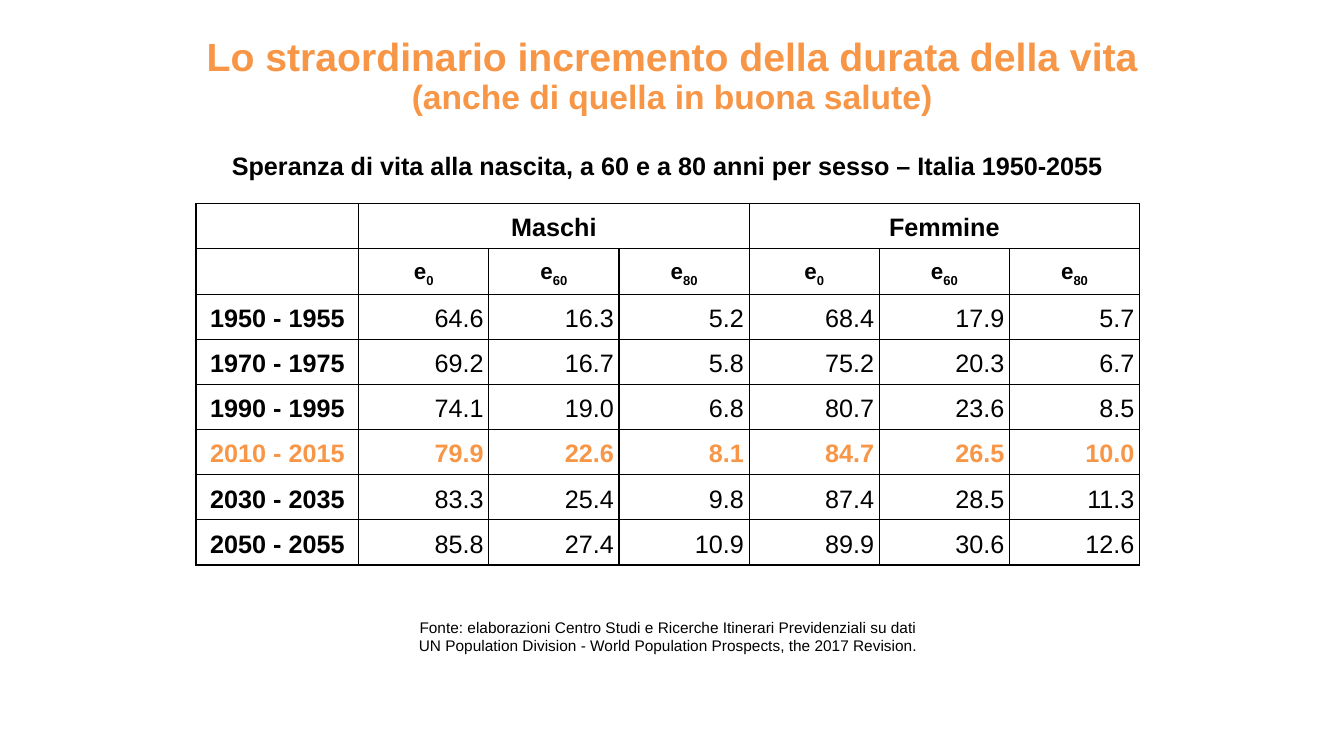
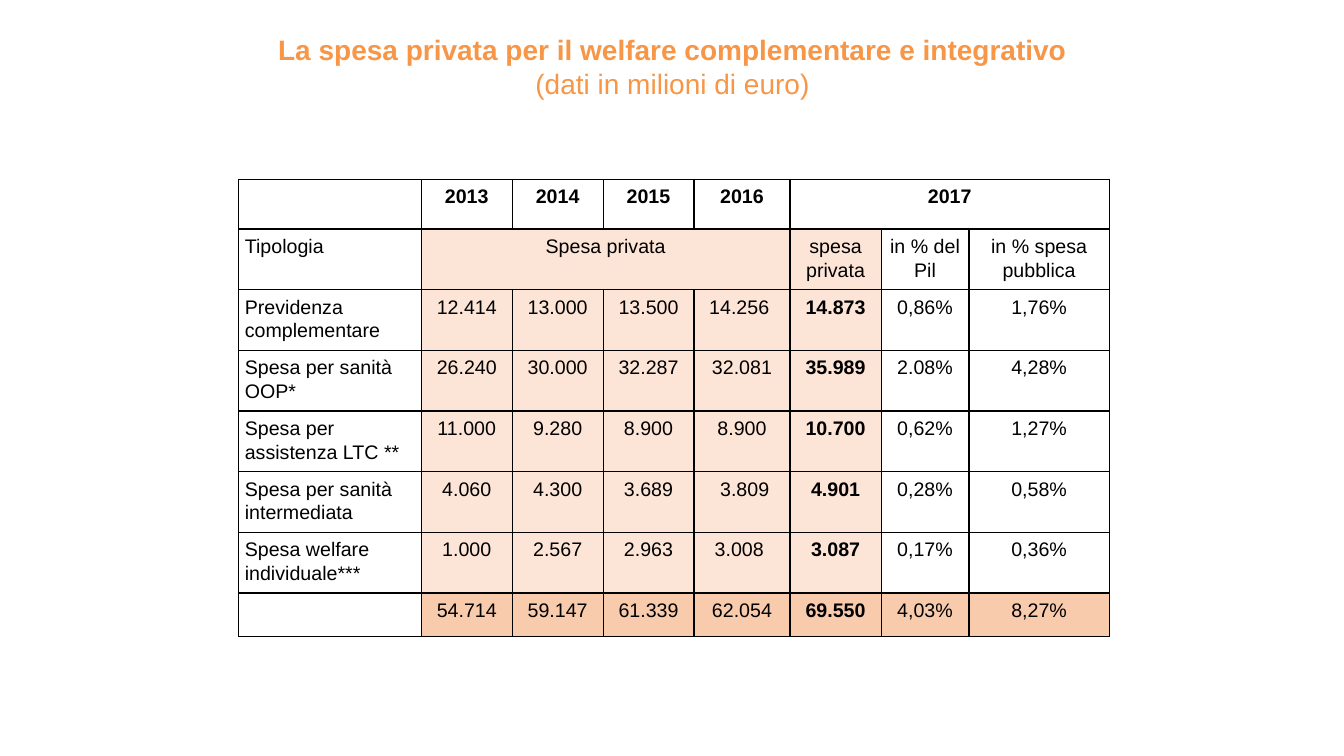
from lxml.etree import SubElement
from pptx import Presentation
from pptx.dml.color import RGBColor
from pptx.enum.text import MSO_ANCHOR, PP_ALIGN
from pptx.oxml.ns import qn
from pptx.util import Cm, Pt

ORANGE = "F79646"
BLACK = "000000"
PALE = "FCE4D6"
PEACH = "F8CBAD"


def color(value):
    return RGBColor.from_string(value)


class Report:
    font_name = "Arial"
    border_width = Pt(0.96)

    def __init__(self):
        self.deck = Presentation()
        self.deck.slide_width = Cm(33.87)
        self.deck.slide_height = Cm(19.05)
        self.page = None

    def new_page(self):
        self.page = self.deck.slides.add_slide(self.deck.slide_layouts[6])

    def style(self, paragraph, size, ink=BLACK, bold=False, align=PP_ALIGN.CENTER, spacing=1.0):
        paragraph.alignment = align
        paragraph.line_spacing = spacing
        paragraph.font.name = self.font_name
        paragraph.font.size = Pt(size)
        paragraph.font.bold = bold
        paragraph.font.color.rgb = color(ink)

    def text(self, content, left, top, width, height, size, anchor=MSO_ANCHOR.MIDDLE, **look):
        box = self.page.shapes.add_textbox(Cm(left), Cm(top), Cm(width), Cm(height))
        box.text_frame.word_wrap = True
        box.text_frame.vertical_anchor = anchor
        paragraph = box.text_frame.paragraphs[0]
        paragraph.add_run().text = content
        self.style(paragraph, size, **look)
        return paragraph

    def title(self, heading, subheading, left, top, width, height, size,
              subheading_size, subheading_bold, spacing):
        paragraph = self.text(heading, left, top, width, height, size,
                              ink=ORANGE, bold=True, spacing=spacing)
        paragraph.add_line_break()
        span = paragraph.add_run()
        span.text = subheading
        span.font.size = Pt(subheading_size)
        span.font.bold = subheading_bold

    def borders(self, cell):
        properties = cell._tc.get_or_add_tcPr()
        for side in ("lnL", "lnR", "lnT", "lnB"):
            line = SubElement(properties, qn(f"a:{side}"), w=str(self.border_width))
            fill = SubElement(line, qn("a:solidFill"))
            SubElement(fill, qn("a:srgbClr"), val=BLACK)

    def cell(self, cell, content, margin, anchor, look, fill=None):
        self.borders(cell)
        if fill:
            cell.fill.solid()
            cell.fill.fore_color.rgb = color(fill)
        else:
            cell.fill.background()
        cell.margin_left = cell.margin_right = Cm(margin)
        cell.margin_top = cell.margin_bottom = Cm(0.13)
        cell.vertical_anchor = anchor
        if not content:
            return
        paragraph = cell.text_frame.paragraphs[0]
        base, _, subscript = content.partition("_")
        paragraph.add_run().text = base
        if subscript:
            span = paragraph.add_run()
            span.text = subscript
            span._r.get_or_add_rPr().set("baseline", "-25000")
        self.style(paragraph, **look)

    def table(self, rows, left, top, widths, heights, margin, anchor, look_at, fill_at):
        table = self.page.shapes.add_table(
            len(rows), len(widths), Cm(left), Cm(top), Cm(sum(widths)), Cm(sum(heights))
        ).table
        table.first_row = table.horz_banding = False
        for column, width in zip(table.columns, widths):
            column.width = Cm(width)
        for row, height in zip(table.rows, heights):
            row.height = Cm(height)
        for r, row in enumerate(rows):
            start = 0
            for c, content in enumerate(row):
                self.cell(table.cell(r, c), content, margin, anchor, look_at(r, c), fill_at(r, c))
                if content is not None:
                    start = c
                elif c + 1 == len(row) or row[c + 1] is not None:
                    table.cell(r, start).merge(table.cell(r, c))


LIFE_ROWS = [
    ["", "Maschi", None, None, "Femmine", None, None],
    [""] + ["e_0", "e_60", "e_80"] * 2,
    ["1950 - 1955", "64.6", "16.3", "5.2", "68.4", "17.9", "5.7"],
    ["1970 - 1975", "69.2", "16.7", "5.8", "75.2", "20.3", "6.7"],
    ["1990 - 1995", "74.1", "19.0", "6.8", "80.7", "23.6", "8.5"],
    ["2010 - 2015", "79.9", "22.6", "8.1", "84.7", "26.5", "10.0"],
    ["2030 - 2035", "83.3", "25.4", "9.8", "87.4", "28.5", "11.3"],
    ["2050 - 2055", "85.8", "27.4", "10.9", "89.9", "30.6", "12.6"],
]

SPENDING_ROWS = [
    ["", "2013", "2014", "2015", "2016", "2017", None, None],
    ["Tipologia", "Spesa privata", None, None, None, "spesa privata", "in % del Pil",
     "in % spesa pubblica"],
    ["Previdenza complementare", "12.414", "13.000", "13.500", "14.256 ", "14.873",
     "0,86%", "1,76%"],
    ["Spesa per sanità OOP*", "26.240", "30.000", "32.287", "32.081", "35.989",
     "2.08%", "4,28%"],
    ["Spesa per assistenza LTC **", "11.000", "9.280", "8.900", "8.900", "10.700",
     "0,62%", "1,27%"],
    ["Spesa per sanità intermediata", "4.060", "4.300", "3.689", " 3.809", "4.901",
     "0,28%", "0,58%"],
    ["Spesa welfare individuale***", "1.000", "2.567", "2.963", "3.008 ", "3.087",
     "0,17%", "0,36%"],
    ["", "54.714", "59.147", "61.339", "62.054", "69.550", "4,03%", "8,27%"],
]


def life_look(row, column):
    highlighted = row == 5
    is_header = row < 2 or column == 0
    return {
        "size": 16 if row == 1 else 18,
        "ink": ORANGE if highlighted else BLACK,
        "bold": is_header or highlighted,
        "align": PP_ALIGN.CENTER if is_header else PP_ALIGN.RIGHT,
        "spacing": 1.15,
    }


def spending_look(row, column):
    return {
        "size": 14,
        "bold": row == 0 or (row > 1 and column == 5),
        "align": PP_ALIGN.LEFT if column == 0 else PP_ALIGN.CENTER,
        "spacing": 1.07,
    }


def spending_fill(row, column):
    if row == 0 or column == 0:
        return None
    if row == len(SPENDING_ROWS) - 1:
        return PEACH
    return PALE if column <= 5 else None


def life_page(report):
    report.new_page()
    report.title("Lo straordinario incremento della durata della vita",
                 "(anche di quella in buona salute)",
                 4.24, 0.76, 25.4, 2.36, 28, 24, True, 0.9)
    report.text("Speranza di vita alla nascita, a 60 e a 80 anni per sesso – Italia 1950-2055",
                4.92, 3.66, 23.8, 1.02, 18, bold=True)
    report.table(LIFE_ROWS, 4.94, 5.13, [4.1] + [3.28] * 6, [1.12] * 7 + [1.14],
                 0.13, MSO_ANCHOR.MIDDLE, life_look, lambda row, column: None)
    report.text("Fonte: elaborazioni Centro Studi e Ricerche Itinerari Previdenziali su dati "
                "UN Population Division - World Population Prospects, the 2017 Revision.",
                10.16, 15.44, 13.36, 1.3, 11, anchor=MSO_ANCHOR.TOP)


def spending_page(report):
    report.new_page()
    report.title("La spesa privata per il welfare complementare e integrativo",
                 "(dati in milioni di euro)",
                 6.0, 0.92, 21.9, 1.5, 20, 20, False, 1.0)
    report.table(SPENDING_ROWS, 6.02, 4.52, [4.6] + [2.29] * 3 + [2.42, 2.3, 2.21, 3.54],
                 [1.25] + [1.45] * 6 + [1.1], 0.15, MSO_ANCHOR.TOP, spending_look, spending_fill)


def main():
    report = Report()
    life_page(report)
    spending_page(report)
    report.deck.save("out.pptx")


if __name__ == "__main__":
    main()
